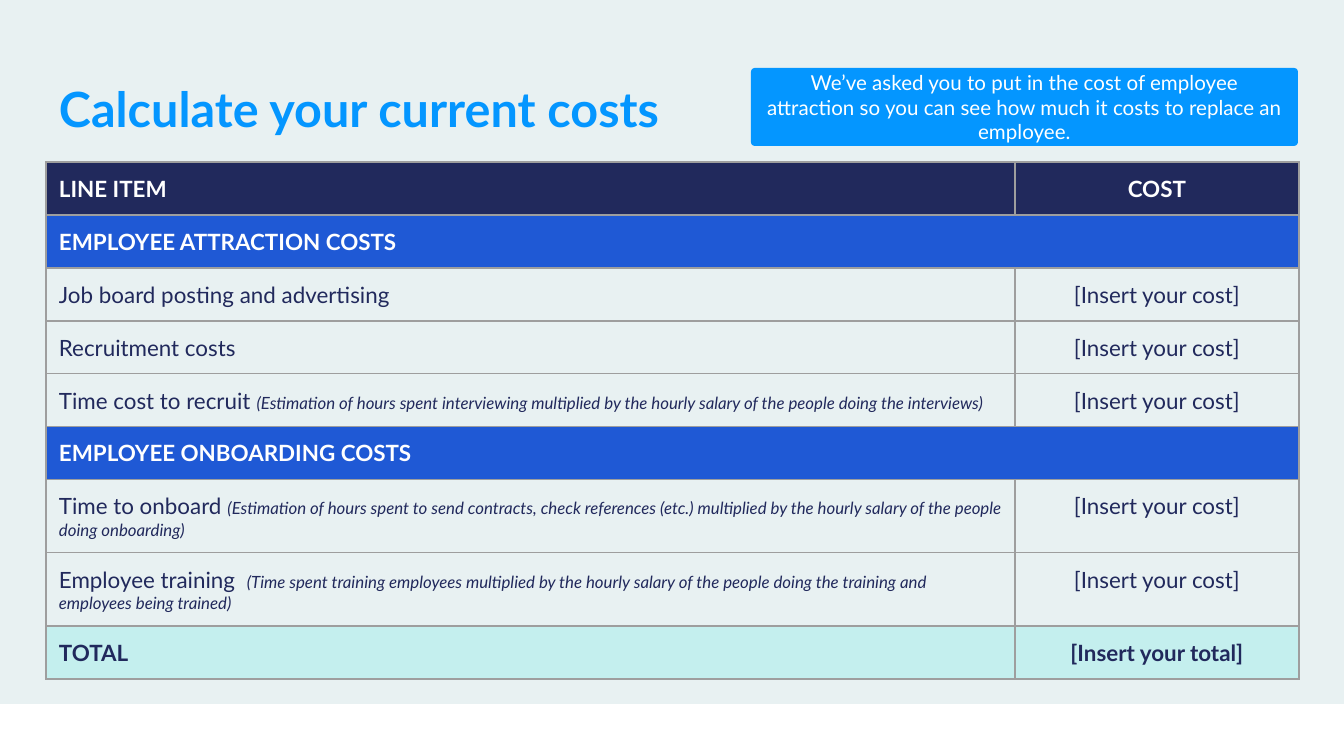
"""Build the employee cost calculator slide."""
from dataclasses import dataclass

from lxml.etree import SubElement
from pptx import Presentation
from pptx.dml.color import RGBColor
from pptx.enum.shapes import MSO_SHAPE
from pptx.enum.text import MSO_ANCHOR, PP_ALIGN
from pptx.oxml.ns import qn
from pptx.util import Pt


@dataclass(frozen=True)
class Theme:
    font: str = "Lato"
    backdrop: str = "E8F1F2"
    bright: str = "0496FF"
    navy: str = "21295C"
    section: str = "1F59D5"
    total: str = "C4EFEE"
    white: str = "FFFFFF"
    callout_ink: str = "FEFFFF"
    border: str = "9E9E9E"
    title_size: int = 26
    body_size: int = 12
    callout_size: int = 11
    note_size: int = 9


theme = Theme()
EMU_PER_PX = 914400 / 134.4


def px(count):
    return round(count * EMU_PER_PX)


def write(paragraph, text, size, color, bold=False, italic=False):
    run = paragraph.add_run()
    run.text = text
    run.font.name = theme.font
    run.font.size = Pt(size)
    run.font.bold = bold
    run.font.italic = italic
    run.font.color.rgb = RGBColor.from_string(color)


deck = Presentation()
deck.slide_width, deck.slide_height = px(1344), px(756)
slide = deck.slides.add_slide(deck.slide_layouts[6])
shapes = slide.shapes

backdrop = shapes.add_shape(MSO_SHAPE.RECTANGLE, 0, 0, px(1344), px(704))
callout = shapes.add_shape(MSO_SHAPE.ROUNDED_RECTANGLE, px(751), px(68), px(547), px(78))
callout.adjustments[0] = 0.05
for panel, color in ((backdrop, theme.backdrop), (callout, theme.bright)):
    panel.shadow.inherit = False
    panel.fill.solid()
    panel.fill.fore_color.rgb = RGBColor.from_string(color)
    panel.line.fill.background()

title = shapes.add_textbox(px(46), px(66), px(641), px(85))
for frame in (title.text_frame, callout.text_frame):
    frame.word_wrap = True
    frame.margin_left = frame.margin_right = px(13)
    frame.margin_top = frame.margin_bottom = px(13)
write(title.text_frame.paragraphs[0], "Calculate your current costs",
      theme.title_size, theme.bright, bold=True)

callout.text_frame.vertical_anchor = MSO_ANCHOR.MIDDLE
advice = callout.text_frame.paragraphs[0]
advice.alignment = PP_ALIGN.CENTER
write(advice, "We’ve asked you to put in the cost of employee attraction so you can "
      "see how much it costs to replace an employee.",
      theme.callout_size, theme.callout_ink)

styles = {
    "header": (theme.navy, theme.white, True),
    "section": (theme.section, theme.white, True),
    "item": (None, theme.navy, False),
    "total": (theme.total, theme.navy, True),
}
insert_cost = "[Insert your cost]"
lines = [
    ("header", "LINE ITEM", "", "COST", 53),
    ("section", "EMPLOYEE ATTRACTION COSTS", "", "", 53),
    ("item", "Job board posting and advertising", "", insert_cost, 53),
    ("item", "Recruitment costs", "", insert_cost, 53),
    ("item", "Time cost to recruit ",
     "(Estimation of hours spent interviewing multiplied by the hourly salary "
     "of the people doing the interviews)", insert_cost, 53),
    ("section", "EMPLOYEE ONBOARDING COSTS", "", "", 53),
    ("item", "Time to onboard ",
     "(Estimation of hours spent to send contracts, check references (etc.) multiplied "
     "by the hourly salary of the people doing onboarding)", insert_cost, 73),
    ("item", "Employee training  ",
     "(Time spent training employees multiplied by the hourly salary of the people "
     "doing the training and employees being trained)", insert_cost, 73),
    ("total", "TOTAL", "", "[Insert your total]", 53),
]

table_height = sum(line[-1] for line in lines)
costs = shapes.add_table(len(lines), 2, px(46), px(162), px(1253), px(table_height)).table
costs.first_row = costs.horz_banding = False
costs.columns[0].width, costs.columns[1].width = px(969), px(284)

for index, (kind, label, note, amount, height) in enumerate(lines):
    costs.rows[index].height = px(height)
    fill, ink, bold = styles[kind]
    label_cell, amount_cell = costs.cell(index, 0), costs.cell(index, 1)
    for cell in (label_cell, amount_cell):
        cell.margin_left = cell.margin_right = px(13)
        cell.margin_top = cell.margin_bottom = px(13)
        properties = cell._tc.get_or_add_tcPr()
        for side in ("a:lnL", "a:lnR", "a:lnT", "a:lnB"):
            edge = SubElement(properties, qn(side), w=str(Pt(0.75)))
            SubElement(SubElement(edge, qn("a:solidFill")), qn("a:srgbClr"), val=theme.border)
        if fill:
            cell.fill.solid()
            cell.fill.fore_color.rgb = RGBColor.from_string(fill)
        else:
            cell.fill.background()

    wording = label_cell.text_frame.paragraphs[0]
    write(wording, label, theme.body_size, ink, bold)
    if note:
        write(wording, note, theme.note_size, ink, italic=True)
    if amount:
        figure = amount_cell.text_frame.paragraphs[0]
        figure.alignment = PP_ALIGN.CENTER
        write(figure, amount, theme.body_size, ink, bold)
    else:
        label_cell.merge(amount_cell)

deck.save("out.pptx")
